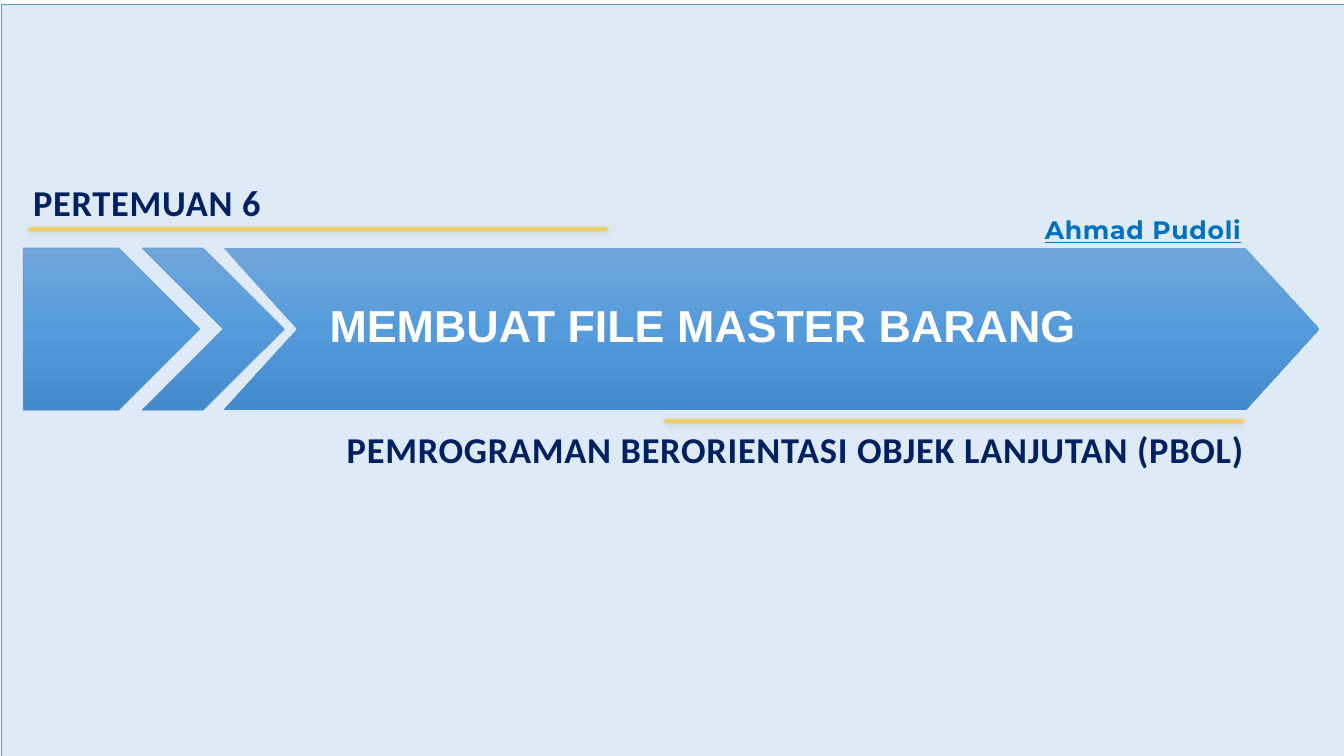
import copy

import pptx
import pptx.util
import pptx.dml.color
import pptx.enum.shapes
import pptx.enum.text
import pptx.oxml
import pptx.oxml.ns

Pt = pptx.util.Pt
SHAPE = pptx.enum.shapes.MSO_SHAPE
ALIGN = pptx.enum.text.PP_ALIGN
qn = pptx.oxml.ns.qn


class Theme:
    """Colours, fonts and type sizes of the slide."""
    background = "DEEBF7"
    outline = "5B9BD5"
    blue = ("71A6DB", "559BDB", "448ACA")
    gold = ("FFC64B", "FFC000", "E3AB00")
    heading = dict(font="Calibri", size=26, color="002060", spacing=0.5)
    title = dict(font="Arial", size=32, color="FFFFFF")
    author = dict(font="Montserrat", size=18, color="0070C0", spacing=0.5,
                  underline=True)


BAR_EFFECTS = (
    '<a:effectLst %s>'
    '<a:outerShdw blurRad="57150" dist="19050" dir="5400000" algn="ctr" rotWithShape="0">'
    '<a:srgbClr val="000000"><a:alpha val="63000"/></a:srgbClr></a:outerShdw>'
    '<a:softEdge rad="31750"/></a:effectLst>' % pptx.oxml.ns.nsdecls("a"))


def rgb(code):
    """Turn a hex code into a colour."""
    return pptx.dml.color.RGBColor.from_string(code)


class Builder:
    """Draws styled elements on the current slide."""

    def __init__(self, prs, theme):
        """Add a title-only slide and keep the theme."""
        self.theme = theme
        self.s = prs.slides.add_slide(prs.slide_layouts[5])

    def shape(self, kind, box, fill, line=None, adj=None):
        """Add a preset shape with a solid or a top-to-bottom gradient fill."""
        sp = self.s.shapes.add_shape(kind, *map(Pt, box))
        sp.shadow.inherit = False
        if adj is not None:
            sp.adjustments[0] = adj
        if isinstance(fill, str):
            sp.fill.solid()
            sp.fill.fore_color.rgb = rgb(fill)
        else:
            self.gradient(sp, fill)
        if line:
            sp.line.color.rgb = rgb(line)
            sp.line.width = Pt(0.5)
        else:
            sp.line.fill.background()
        return sp

    def gradient(self, sp, colors):
        """Fill a shape with three evenly spaced colour stops."""
        sp.fill.gradient()
        sp.fill.gradient_angle = 270
        stops = sp._element.spPr.find(qn("a:gradFill")).find(qn("a:gsLst"))
        stops.insert(1, copy.deepcopy(stops[0]))
        for i, (stop, color) in enumerate(zip(sp.fill.gradient_stops, colors)):
            stop.position = i / 2
            stop.color.rgb = rgb(color)

    def bar(self, left, top):
        """Add a soft gold rule with a shadow."""
        sp = self.shape(SHAPE.RECTANGLE, (left, top, 418.3, 6.5), self.theme.gold)
        spPr = sp._element.spPr
        spPr.replace(spPr.find(qn("a:effectLst")), pptx.oxml.parse_xml(BAR_EFFECTS))

    def text(self, text, box, style, align=ALIGN.LEFT):
        """Add a text box with one styled line."""
        sp = self.s.shapes.add_textbox(*map(Pt, box))
        self.format(sp, text, style, align)

    def title(self, text, box, style):
        """Place the title placeholder in front of the arrows."""
        sp = self.s.shapes.title
        sp.left, sp.top, sp.width, sp.height = map(Pt, box)
        self.format(sp, text, style, ALIGN.LEFT)
        self.s.shapes._spTree.append(sp._element)

    def format(self, sp, text, style, align):
        """Write the text and apply its style."""
        tf = sp.text_frame
        tf.text = text
        tf.word_wrap = True
        tf.auto_size = pptx.enum.text.MSO_AUTO_SIZE.NONE
        tf.vertical_anchor = pptx.enum.text.MSO_ANCHOR.MIDDLE
        p = tf.paragraphs[0]
        p.alignment = align
        r = p.runs[0]
        r.font.name = style["font"]
        r.font.size = Pt(style["size"])
        r.font.bold = True
        r.font.color.rgb = rgb(style["color"])
        if style.get("underline"):
            r.font.underline = True
        if "spacing" in style:
            r.font._element.set("spc", str(int(style["spacing"] * 100)))


def main():
    """Build the cover slide and save it."""
    prs = pptx.Presentation()
    prs.slide_width, prs.slide_height = Pt(960), Pt(540)
    theme = Theme()
    b = Builder(prs, theme)

    b.shape(SHAPE.RECTANGLE, (0.7, 2.9, 960, 540), theme.background, theme.outline)
    arrow_top, arrow_height = 177.1, 115.9
    for kind, left, width, adj, line in (
            (SHAPE.PENTAGON, 16.6, 126, 0.5, theme.outline),
            (SHAPE.CHEVRON, 101.5, 101.5, 0.572, theme.outline),
            (SHAPE.CHEVRON, 159.8, 782.6, 0.455, None)):
        b.shape(kind, (left, arrow_top, width, arrow_height), theme.blue, line, adj)

    b.text("PERTEMUAN 6", (16.6, 131, 336.2, 26), theme.heading)
    b.bar(18, 160.6)
    b.bar(472.3, 297.4)
    b.text("PEMROGRAMAN BERORIENTASI OBJEK LANJUTAN (PBOL)",
           (143.3, 307.4, 753.1, 26), theme.heading, ALIGN.RIGHT)
    b.title("MEMBUAT FILE MASTER BARANG", (228.2, 190.8, 679, 82.1), theme.title)
    b.text("Ahmad Pudoli", (642.2, 151.2, 251.3, 26), theme.author, ALIGN.RIGHT)

    prs.save("out.pptx")


main()
